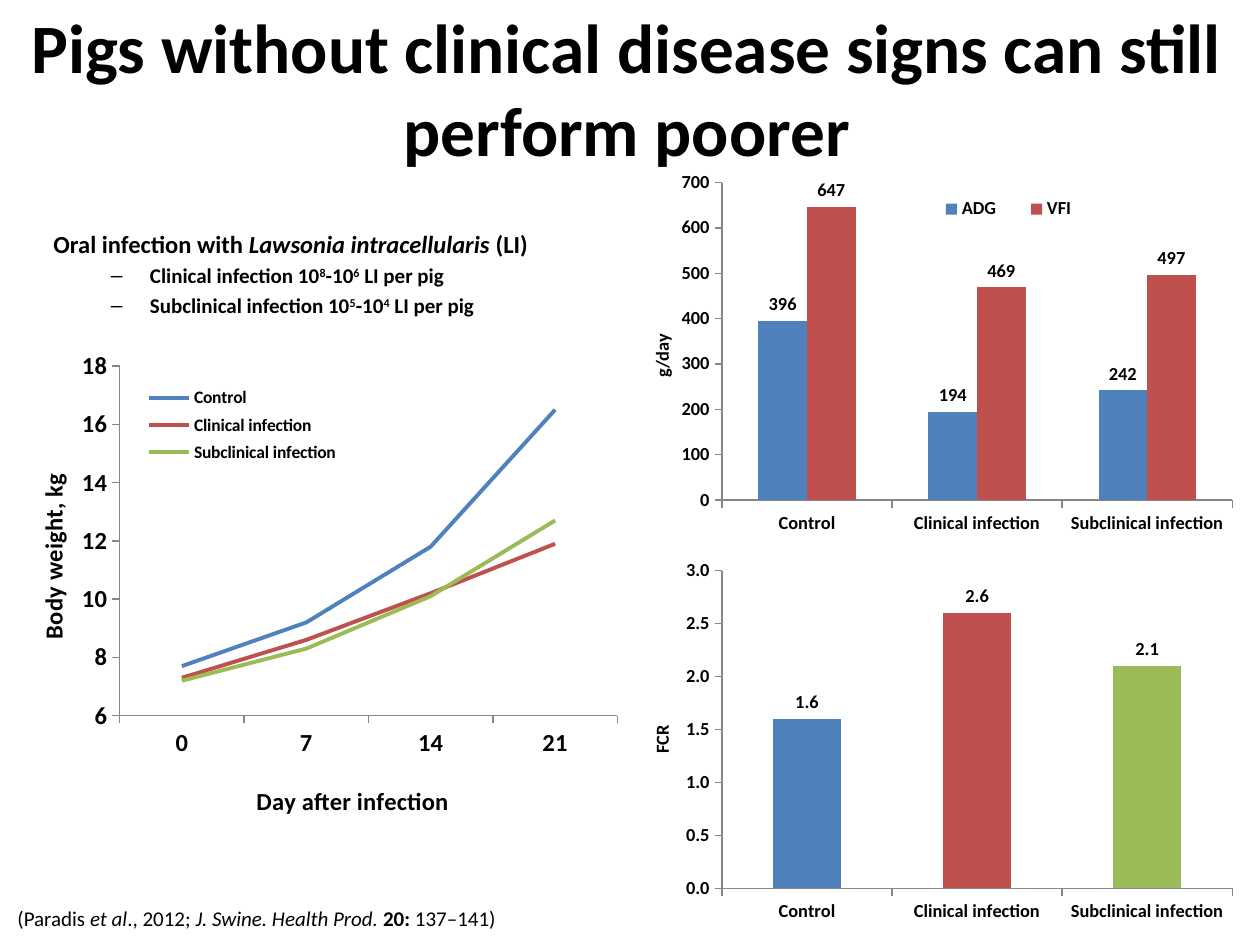
from lxml import etree
from pptx import Presentation
from pptx.chart.data import CategoryChartData
from pptx.dml.color import RGBColor
from pptx.enum.chart import XL_CHART_TYPE as ChartType
from pptx.enum.chart import XL_LABEL_POSITION as LabelPosition
from pptx.enum.chart import XL_LEGEND_POSITION as LegendPosition
from pptx.enum.chart import XL_TICK_MARK as TickMark
from pptx.enum.text import MSO_ANCHOR as Anchor
from pptx.enum.text import MSO_AUTO_SIZE as AutoSize
from pptx.enum.text import PP_ALIGN as Align
from pptx.oxml.ns import qn
from pptx.util import Inches, Pt

BLACK = RGBColor(0x00, 0x00, 0x00)
GRAY = RGBColor(0x86, 0x86, 0x86)
BLUE = RGBColor(0x4F, 0x81, 0xBD)
RED = RGBColor(0xC0, 0x50, 0x4D)
GREEN = RGBColor(0x9B, 0xBB, 0x59)
FONT = "Calibri"
GROUPS = ["Control", "Clinical infection", "Subclinical infection"]


def set_values(target, values):
    for name, value in values.items():
        setattr(target, name, value)


def format_font(font, size, **values):
    set_values(font, {"name": FONT, "size": Pt(size), **values})
    font.color.rgb = BLACK


def place(shape, left, top, width, height):
    set_values(shape, {"left": Inches(left), "top": Inches(top),
                       "width": Inches(width), "height": Inches(height)})


def add_runs(paragraph, size, runs):
    """Add (text, font values) pairs; a "raised" value makes superscript."""
    for text, values in runs:
        run = paragraph.add_run()
        run.text = text
        font_values = dict(values)
        raised = font_values.pop("raised", False)
        format_font(run.font, size, **font_values)
        if raised:
            run.font._element.set("baseline", "30000")


def set_indent(paragraph, left, hanging, bullet):
    properties = paragraph._p.get_or_add_pPr()
    properties.set("marL", str(Inches(left)))
    properties.set("indent", str(-Inches(hanging)))
    if bullet:
        etree.SubElement(properties, qn("a:buChar")).set("char", bullet)
    else:
        etree.SubElement(properties, qn("a:buNone"))


def set_title(slide):
    title = slide.shapes.title
    place(title, 0.12, 0.07, 9.71, 1.25)
    frame = title.text_frame
    set_values(frame, {"auto_size": AutoSize.NONE, "word_wrap": True,
                       "vertical_anchor": Anchor.MIDDLE})
    paragraph = frame.paragraphs[0]
    paragraph.alignment = Align.CENTER
    add_runs(paragraph, 39.6, [
        ("Pigs without clinical disease signs can still perform poorer", {"bold": True})])


def set_infection_list(slide):
    body = slide.placeholders[1]
    place(body, 0.28, 1.77, 4.92, 1.02)
    frame = body.text_frame
    frame.auto_size = AutoSize.NONE
    bold = {"bold": True}
    heading = frame.paragraphs[0]
    set_indent(heading, 0.38, 0.38, None)
    add_runs(heading, 14, [(" Oral infection with ", bold),
                           ("Lawsonia intracellularis ", {"bold": True, "italic": True}),
                           ("(LI)", bold)])
    raised = {"bold": True, "raised": True}
    for kind, high, low in [("Clinical", "8", "6"), ("Subclinical", "5", "4")]:
        paragraph = frame.add_paragraph()
        paragraph.level = 1
        set_indent(paragraph, 0.81, 0.31, "–")
        add_runs(paragraph, 12, [(f"{kind} infection 10", bold), (high, raised),
                                 ("-10", bold), (low, raised), (" LI per pig", bold)])


def add_citation(slide):
    box = slide.shapes.add_textbox(Inches(0.04), Inches(7.14), Inches(4.01), Inches(0.3))
    set_values(box.text_frame, {"word_wrap": False, "auto_size": AutoSize.SHAPE_TO_FIT_TEXT})
    italic = {"italic": True}
    add_runs(box.text_frame.paragraphs[0], 12, [
        ("(Paradis ", {}), ("et al", italic), ("., 2012; ", {}),
        ("J. Swine. Health Prod. ", italic), ("20: ", {"bold": True}), ("137–141)", {})])


def set_layout(element, before, **fractions):
    """Fix a chart part's place, as fractions of the chart, after the child named before."""
    for old in element.findall(qn("c:layout")):
        element.remove(old)
    layout = etree.Element(qn("c:layout"))
    manual = etree.SubElement(layout, qn("c:manualLayout"))
    if before is None:
        etree.SubElement(manual, qn("c:layoutTarget")).set("val", "inner")
    for name in ("xMode", "yMode"):
        etree.SubElement(manual, qn(f"c:{name}")).set("val", "edge")
    for name, value in fractions.items():
        etree.SubElement(manual, qn(f"c:{name}")).set("val", str(value))
    previous = None if before is None else element.find(qn(before))
    element.insert(0 if previous is None else element.index(previous) + 1, layout)


def add_chart(slide, kind, box, size, categories, series, plot):
    data = CategoryChartData()
    data.categories = categories
    for name, values in series:
        data.add_series(name, values)
    frame = slide.shapes.add_chart(kind, *(Inches(length) for length in box), data)
    chart = frame.chart
    set_values(chart, {"has_title": False, "has_legend": False})
    format_font(chart.font, size, bold=True)
    chart.plots[0].vary_by_categories = False
    set_layout(chart.element.find(".//" + qn("c:plotArea")), None,
               **dict(zip("xywh", plot)))
    for axis in (chart.category_axis, chart.value_axis):
        set_values(axis, {"has_major_gridlines": False,
                          "major_tick_mark": TickMark.OUTSIDE,
                          "minor_tick_mark": TickMark.NONE})
        axis.format.line.color.rgb = GRAY
    return chart


def set_value_axis(axis, low, high, step, number_format):
    set_values(axis, {"minimum_scale": low, "maximum_scale": high, "major_unit": step})
    set_values(axis.tick_labels, {"number_format": number_format,
                                  "number_format_is_linked": False})


def add_axis_title(axis, text, size, left, top, upright=False):
    title = axis.axis_title
    paragraph = title.text_frame.paragraphs[0]
    add_runs(paragraph, size, [(text, {"bold": True})])
    if upright:
        body = title.element.find(".//" + qn("a:bodyPr"))
        body.set("rot", "-5400000")
        body.set("vert", "horz")
    set_layout(title.element, "c:tx", x=left, y=top)


def add_legend(chart, size, left, top, width, height):
    chart.has_legend = True
    set_values(chart.legend, {"position": LegendPosition.RIGHT, "include_in_layout": False})
    format_font(chart.legend.font, size, bold=True)
    set_layout(chart.element.find(".//" + qn("c:legend")), "c:legendPos",
               x=left, y=top, w=width, h=height)


def style_columns(chart, label_format, colors):
    set_values(chart.plots[0], {"gap_width": 150, "overlap": 0})
    for series, color in zip(chart.plots[0].series, colors):
        series.format.fill.solid()
        series.format.fill.fore_color.rgb = color
        labels = series.data_labels
        set_values(labels, {"show_value": True, "number_format": label_format,
                            "number_format_is_linked": False,
                            "position": LabelPosition.OUTSIDE_END})
        format_font(labels.font, 10.5, bold=True)


def add_weight_chart(slide):
    weights = [(7.7, 9.2, 11.8, 16.5), (7.3, 8.6, 10.2, 11.9), (7.2, 8.3, 10.1, 12.7)]
    chart = add_chart(slide, ChartType.LINE, (0, 2.71, 5, 3.91), 14, ["0", "7", "14", "21"],
                      zip(GROUPS, weights), (0.19, 0.05, 0.79, 0.71))
    for series, color in zip(chart.plots[0].series, (BLUE, RED, GREEN)):
        series.smooth = False
        series.format.line.color.rgb = color
        series.format.line.width = Pt(2.25)
    set_value_axis(chart.value_axis, 6, 18, 2, "General")
    add_axis_title(chart.category_axis, "Day after infection", 14, 0.4, 0.89)
    add_axis_title(chart.value_axis, "Body weight, kg", 14, 0.05, 0.26, upright=True)
    add_legend(chart, 10, 0.22, 0.08, 0.33, 0.18)


def add_gain_chart(slide):
    chart = add_chart(slide, ChartType.COLUMN_CLUSTERED, (4.88, 1.3, 5, 3), 10.5, GROUPS,
                      [("ADG", (396, 194, 242)), ("VFI", (647, 469, 497))],
                      (0.17, 0.05, 0.81, 0.84))
    style_columns(chart, "0", (BLUE, RED))
    set_value_axis(chart.value_axis, 0, 700, 100, "0")
    add_axis_title(chart.value_axis, "g/day", 10.5, 0.05, 0.44, upright=True)
    add_legend(chart, 10.5, 0.48, 0.08, 0.29, 0.08)


def add_conversion_chart(slide):
    chart = add_chart(slide, ChartType.COLUMN_CLUSTERED, (4.88, 4.38, 5, 3), 10.5, GROUPS,
                      [("Series 1", (1.6, 2.6, 2.1))], (0.17, 0.05, 0.81, 0.84))
    style_columns(chart, "0.0", (BLUE,))
    for index, color in enumerate((BLUE, RED, GREEN)):
        fill = chart.plots[0].series[0].points[index].format.fill
        fill.solid()
        fill.fore_color.rgb = color
    set_value_axis(chart.value_axis, 0, 3, 0.5, "#,##0.0")
    add_axis_title(chart.value_axis, "FCR", 10.5, 0.05, 0.45, upright=True)


def main():
    presentation = Presentation()
    set_values(presentation, {"slide_width": Inches(10), "slide_height": Inches(7.5)})
    slide = presentation.slides.add_slide(presentation.slide_layouts[1])
    for build in (set_title, set_infection_list, add_weight_chart, add_gain_chart,
                  add_conversion_chart, add_citation):
        build(slide)
    presentation.save("out.pptx")


if __name__ == "__main__":
    main()
